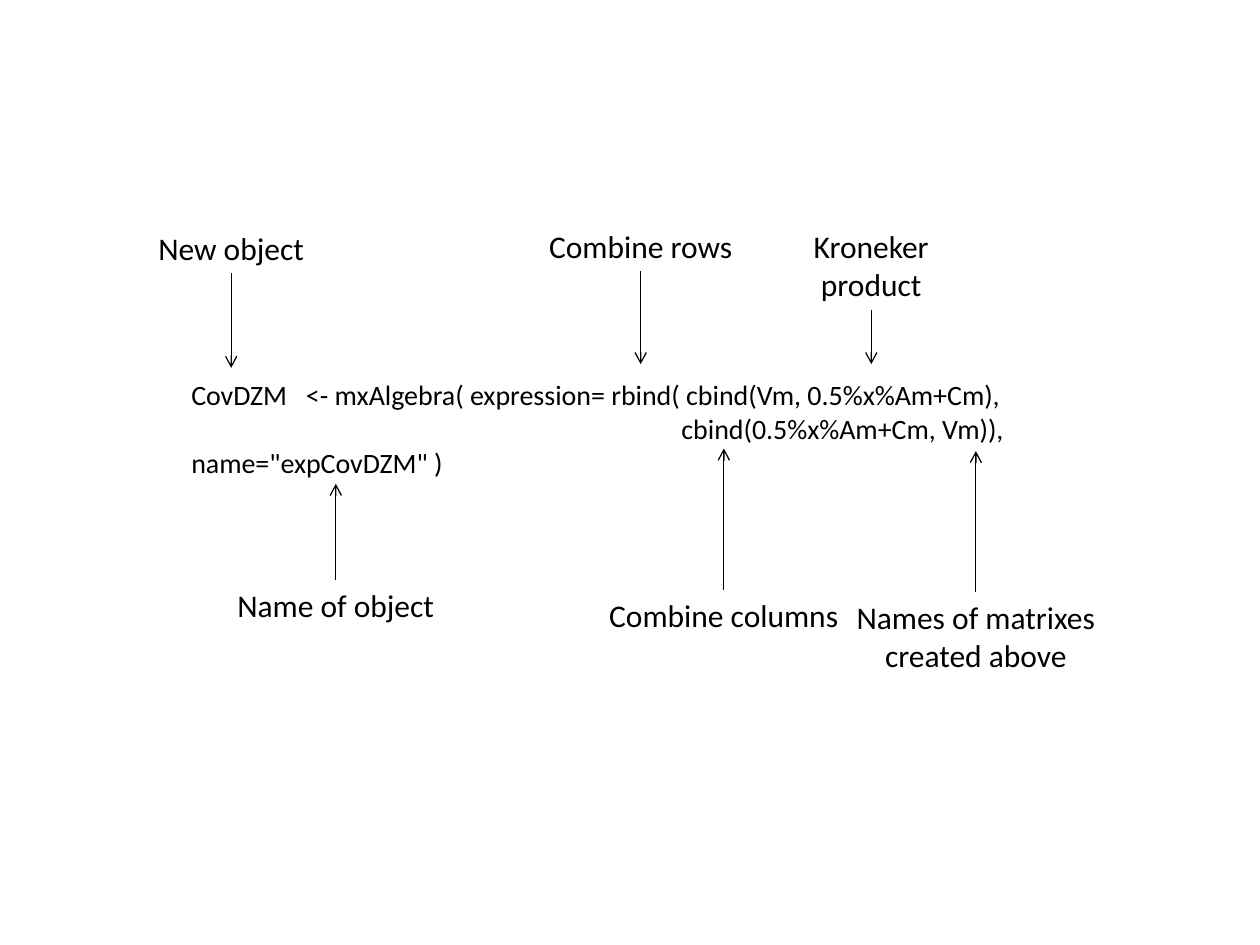
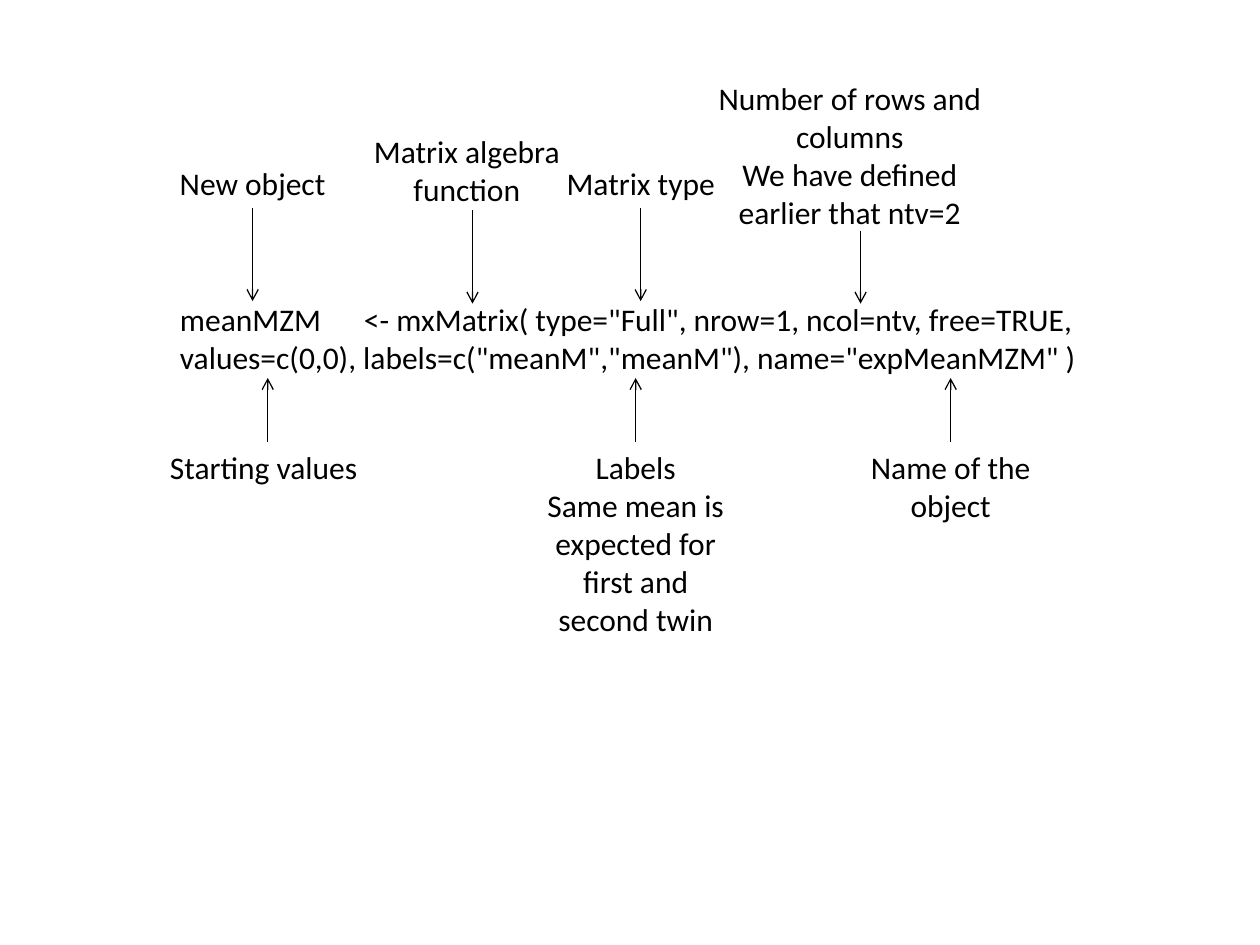
from lxml.etree import SubElement
from pptx import Presentation
from pptx.dml.color import RGBColor
from pptx.enum.shapes import MSO_CONNECTOR as Link
from pptx.enum.text import MSO_AUTO_SIZE as Fit, PP_ALIGN as Align
from pptx.oxml.ns import qn
from pptx.util import Inches, Pt

BLACK = RGBColor(0, 0, 0)
FONT = "Calibri"
TOP, BOTTOM = 0, 2


class Deck:
    def __init__(self):
        self.prs = Presentation()
        self.prs.slide_width, self.prs.slide_height = Inches(10), Inches(7.5)
        self.slide = None

    def page(self):
        self.slide = self.prs.slides.add_slide(self.prs.slide_layouts[6])

    def text(self, at, lines, size=18, align=Align.CENTER):
        box = self.slide.shapes.add_textbox(*map(Inches, at))
        frame = box.text_frame
        frame.word_wrap = True
        frame.auto_size = Fit.SHAPE_TO_FIT_TEXT
        frame.text = lines
        for par in frame.paragraphs:
            par.alignment = align
            par.font.name, par.font.size = FONT, Pt(size)
            par.font.color.rgb = BLACK
        return box

    def code(self, at, lines, size, tab, indent=0):
        """Code with a tab stop in its first line and an indent in its last."""
        box = self.text(at, lines, size, Align.LEFT)
        pars = box.text_frame.paragraphs
        props = pars[0]._p.get_or_add_pPr()
        stops = SubElement(props, qn("a:tabLst"))
        SubElement(stops, qn("a:tab"), pos=str(Inches(tab)), algn="l")
        props.insert(0, stops)
        if indent:
            pars[-1]._p.get_or_add_pPr().set("indent", str(Inches(indent)))

    def arrow(self, start, end):
        line = self.slide.shapes.add_connector(Link.STRAIGHT, *start, *end)
        line.line.color.rgb = BLACK
        line.line.width = Pt(0.75)
        SubElement(line.line._get_or_add_ln(), qn("a:tailEnd"), type="arrow")
        SubElement(line._element.spPr, qn("a:effectLst"))
        return line

    def note(self, at, lines, tip, start=None, align=Align.CENTER):
        """A label with an arrow to height tip, joined to it unless start is given."""
        box = self.text(at, lines, align=align)
        if start:
            x, y = map(Inches, start)
            self.arrow((x, y), (x, Inches(tip)))
            return
        x = box.left + box.width // 2
        side = TOP if Inches(tip) < box.top else BOTTOM
        y = box.top if side == TOP else box.top + box.height
        self.arrow((x, y), (x, Inches(tip))).begin_connect(box, side)


def algebra(deck):
    deck.page()
    deck.code((1.42, 2.95, 8, 1.21),
              "CovDZM\t<- mxAlgebra( expression= rbind( cbind(Vm, 0.5%x%Am+Cm),\n"
              'cbind(0.5%x%Am+Cm, Vm)), name="expCovDZM" )',
              size=16, tab=0.91, indent=3.89)
    deck.note((1, 1.77, 1.67, 0.4), "New object", 2.92)
    deck.note((4.25, 1.75, 1.67, 0.4), "Combine rows", 2.89)
    deck.note((1.5, 4.6, 2.33, 0.4), "Name of object", 3.84)
    deck.note((4.58, 4.68, 2.33, 0.4), "Combine columns", 3.56)
    deck.note((6.58, 4.7, 2.33, 0.71), "Names of matrixes created above", 3.58)
    deck.note((6.08, 1.75, 1.67, 0.71), "Kroneker product", 2.89)


def matrix(deck):
    deck.page()
    deck.code((1.33, 2.33, 8.08, 0.71),
              'meanMZM\t<- mxMatrix( type="Full", nrow=1, ncol=ntv, free=TRUE, '
              'values=c(0,0), labels=c("meanM","meanM"), name="expMeanMZM" )',
              size=18, tab=1.46)
    deck.note((1.17, 1.25, 1.67, 0.4), "New object", 2.39)
    deck.note((2.83, 1, 1.75, 0.71), "Matrix algebra function", 2.41, (3.75, 1.67))
    deck.note((4.25, 1.25, 1.67, 0.4), "Matrix type", 2.39)
    deck.note((5.58, 0.58, 2.33, 1.31),
              "Number of rows and columns\nWe have defined earlier that ntv=2",
              2.41, (6.83, 1.83))
    low, wide, tip = 3.51, 1.75, 3
    deck.note((1.25, low, wide, 0.4), "Starting values", tip, align=Align.LEFT)
    deck.note((4.17, low, wide, 1.62),
              "Labels\nSame mean is expected for first and second twin", tip)
    deck.note((6.67, low, wide, 0.71), "Name of the object", tip)


def main():
    deck = Deck()
    algebra(deck)
    matrix(deck)
    deck.prs.save("out.pptx")


if __name__ == "__main__":
    main()
